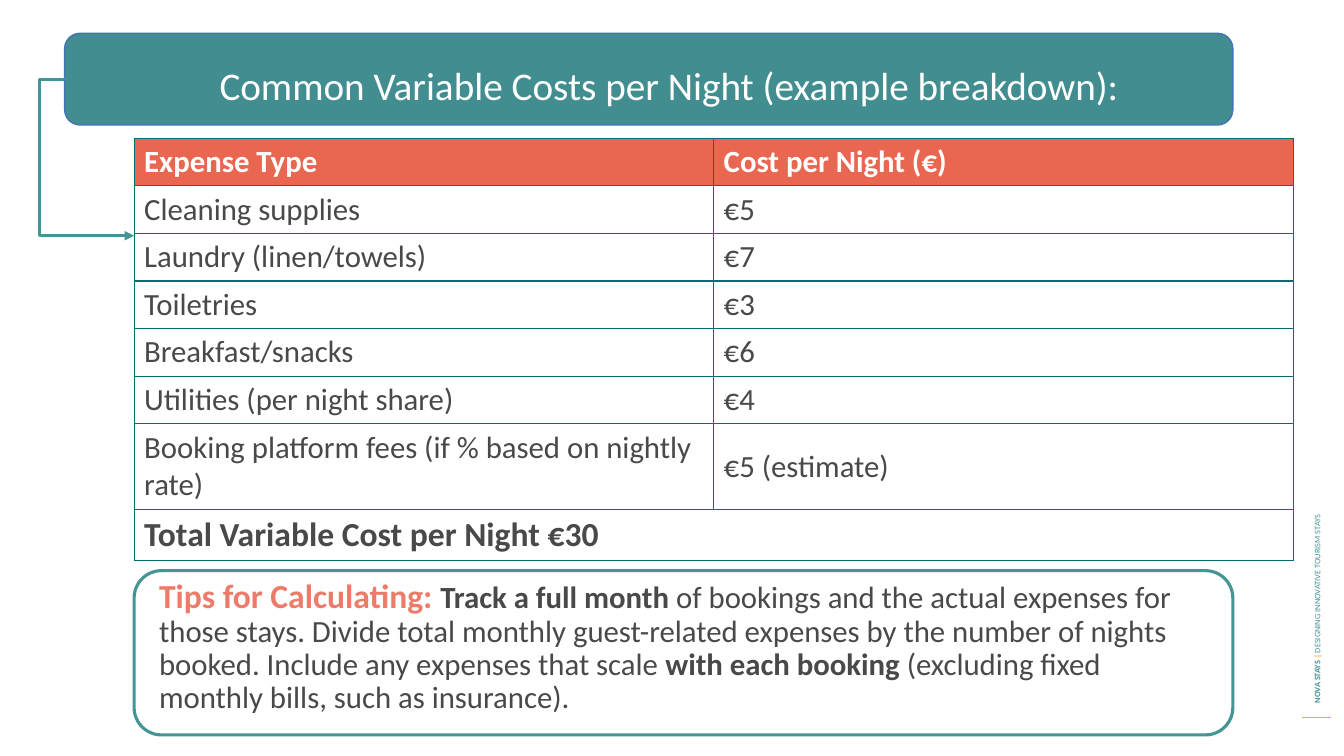
from lxml import etree
from pptx import Presentation
from pptx.dml.color import RGBColor
from pptx.enum.shapes import MSO_CONNECTOR, MSO_SHAPE
from pptx.enum.text import MSO_ANCHOR, PP_ALIGN
from pptx.oxml import parse_xml
from pptx.oxml.ns import nsdecls, qn
from pptx.util import Cm, Pt

# Content
TITLE = "Common Variable Costs per Night (example breakdown):"
COSTS = [
    ("Expense Type", "Cost per Night (€)"),
    ("Cleaning supplies", "€5"),
    ("Laundry (linen/towels)", "€7"),
    ("Toiletries", "€3"),
    ("Breakfast/snacks", "€6"),
    ("Utilities (per night share)", "€4"),
    ("Booking platform fees (if % based on nightly rate)", "€5 (estimate)"),
    ("Total Variable Cost per Night €30", ""),
]
TIPS = [
    ("Tips for Calculating: ", "tip_head"),
    ("Track a full month", "strong"),
    (" of bookings and the actual expenses for those stays. Divide total monthly "
     "guest-related expenses by the number of nights booked. Include any expenses "
     "that scale ", "body"),
    ("with each booking ", "strong"),
    ("(excluding fixed monthly bills, such as insurance).", "body"),
]
SIDE = [
    ("NOVA STAYS ", "side_bold"),
    ("| ", "side_bar"),
    ("DESIGNING INNOVATIVE TOURISM STAYS", "side"),
]

# Theme: colours and type styles
THEME = {
    "font": "Calibri",
    "bar": "418D8F", "bar_edge": "4174BA", "teal": "459597",
    "grid": "086D6E", "header": "E96751", "rule": "FBA63D",
    "styles": {
        "title": {"size": 28, "color": "FFFFFF", "bold": False},
        "head": {"size": 22, "color": "FFFFFF", "bold": True},
        "body": {"size": 22, "color": "494949", "bold": False},
        "strong": {"size": 22, "color": "494949", "bold": True},
        "total": {"size": 24, "color": "494949", "bold": True},
        "tip_head": {"size": 24, "color": "EC7C69", "bold": True},
        "side_bold": {"size": 6, "color": "459597", "bold": True},
        "side_bar": {"size": 6, "color": "FBA63B", "bold": True},
        "side": {"size": 6, "color": "459597", "bold": False},
    },
}

# Layout in centimetres: left, top, width, height
BAR = (1.63, 0.84, 29.44, 2.31)
TITLE_BOX = (2.11, 1.55, 29.49, 1.93)
TABLE = (3.38, 3.48, 29.21, 10.49)
TIPS_FRAME = (3.38, 14.38, 27.69, 4.14)
TIPS_BOX = (3.76, 14.48, 27, 3.95)
SIDE_BOX = (25.86, 10.39, 14.66, 0.51)
ROW, FEES_ROW, TOTAL_ROW = 1.2, 2.15, 1.29
ELBOW_OUT = 0.63


def cm(values):
    return [Cm(v) for v in values]


def rgb(name):
    return RGBColor.from_string(THEME.get(name, name))


def write(p, runs):
    for text, style in runs:
        r = p.add_run()
        r.text = text
        fmt = THEME["styles"][style]
        values = {"name": THEME["font"], "size": Pt(fmt["size"]), "bold": fmt["bold"]}
        for attr, value in values.items():
            setattr(r.font, attr, value)
        r.font.color.rgb = rgb(fmt["color"])


def add_text(s, box, runs, **fmt):
    sp = s.shapes.add_textbox(*cm(box))
    tf = sp.text_frame
    tf.word_wrap = True
    p = tf.paragraphs[0]
    for attr, value in fmt.items():
        setattr(p, attr, value)
    write(p, runs)
    return sp


def add_panel(s, box, line, width, fill=None):
    sp = s.shapes.add_shape(MSO_SHAPE.FLOWCHART_ALTERNATE_PROCESS, *cm(box))
    sp.shadow.inherit = False
    if fill:
        sp.fill.solid()
        sp.fill.fore_color.rgb = rgb(fill)
    else:
        sp.fill.background()
    sp.line.color.rgb = rgb(line)
    sp.line.width = Pt(width)


def add_line(s, kind, ends, color, width):
    line = s.shapes.add_connector(kind, *cm(ends))
    line.line.color.rgb = rgb(color)
    line.line.width = Pt(width)
    etree.SubElement(line._element.spPr, qn("a:effectLst"))
    return line


def add_borders(cell):
    tcPr = cell._tc.get_or_add_tcPr()
    for i, side in enumerate(("lnL", "lnR", "lnT", "lnB")):
        tcPr.insert(i, parse_xml(
            f'<a:{side} {nsdecls("a")} w="{Pt(1)}"><a:solidFill>'
            f'<a:srgbClr val="{THEME["grid"]}"/></a:solidFill></a:{side}>'))


def add_costs(s):
    table = s.shapes.add_table(len(COSTS), 2, *cm(TABLE)).table
    heights = [ROW] * (len(COSTS) - 2) + [FEES_ROW, TOTAL_ROW]
    last = len(COSTS) - 1
    for col in table.columns:
        col.width = Cm(TABLE[2] / 2)
    for i, (row, height) in enumerate(zip(COSTS, heights)):
        table.rows[i].height = Cm(height)
        style = {0: "head", last: "total"}.get(i, "body")
        for j, text in enumerate(row):
            cell = table.cell(i, j)
            cell.vertical_anchor = MSO_ANCHOR.MIDDLE
            if i == 0:
                cell.fill.solid()
                cell.fill.fore_color.rgb = rgb("header")
            else:
                cell.fill.background()
            add_borders(cell)
            if text:
                write(cell.text_frame.paragraphs[0], [(text, style)])
    table.cell(last, 0).merge(table.cell(last, 1))


def add_elbow(s):
    x1, y1 = BAR[0], BAR[1] + BAR[3] / 2
    x2, y2 = TABLE[0], 5.94
    elbow = add_line(s, MSO_CONNECTOR.ELBOW, (x1, y1, x2, y2), "teal", 2.25)
    bend = round(-ELBOW_OUT / (x2 - x1) * 100000)
    guides = elbow._element.spPr.find(qn("a:prstGeom")).get_or_add_avLst()
    etree.SubElement(guides, qn("a:gd"), name="adj1", fmla=f"val {bend}")
    etree.SubElement(elbow.line._get_or_add_ln(), qn("a:tailEnd"), type="triangle")


def main():
    prs = Presentation()
    prs.slide_width, prs.slide_height = Cm(33.87), Cm(19.05)
    s = prs.slides.add_slide(prs.slide_layouts[6])

    # Side strip
    add_line(s, MSO_CONNECTOR.STRAIGHT, (32.82, 18.08, 33.55, 18.08), "rule", 0.75)
    side = add_text(s, SIDE_BOX, SIDE)
    side.rotation = 270
    side.text_frame.vertical_anchor = MSO_ANCHOR.MIDDLE

    # Title bar, elbow arrow and cost table
    add_panel(s, BAR, "bar_edge", 1, "bar")
    add_text(s, TITLE_BOX, [(TITLE, "title")], alignment=PP_ALIGN.CENTER, line_spacing=0.9)
    add_elbow(s)
    add_costs(s)

    # Tips
    add_text(s, TIPS_BOX, TIPS, line_spacing=0.9)
    add_panel(s, TIPS_FRAME, "teal", 2.25)

    prs.save("out.pptx")


if __name__ == "__main__":
    main()
